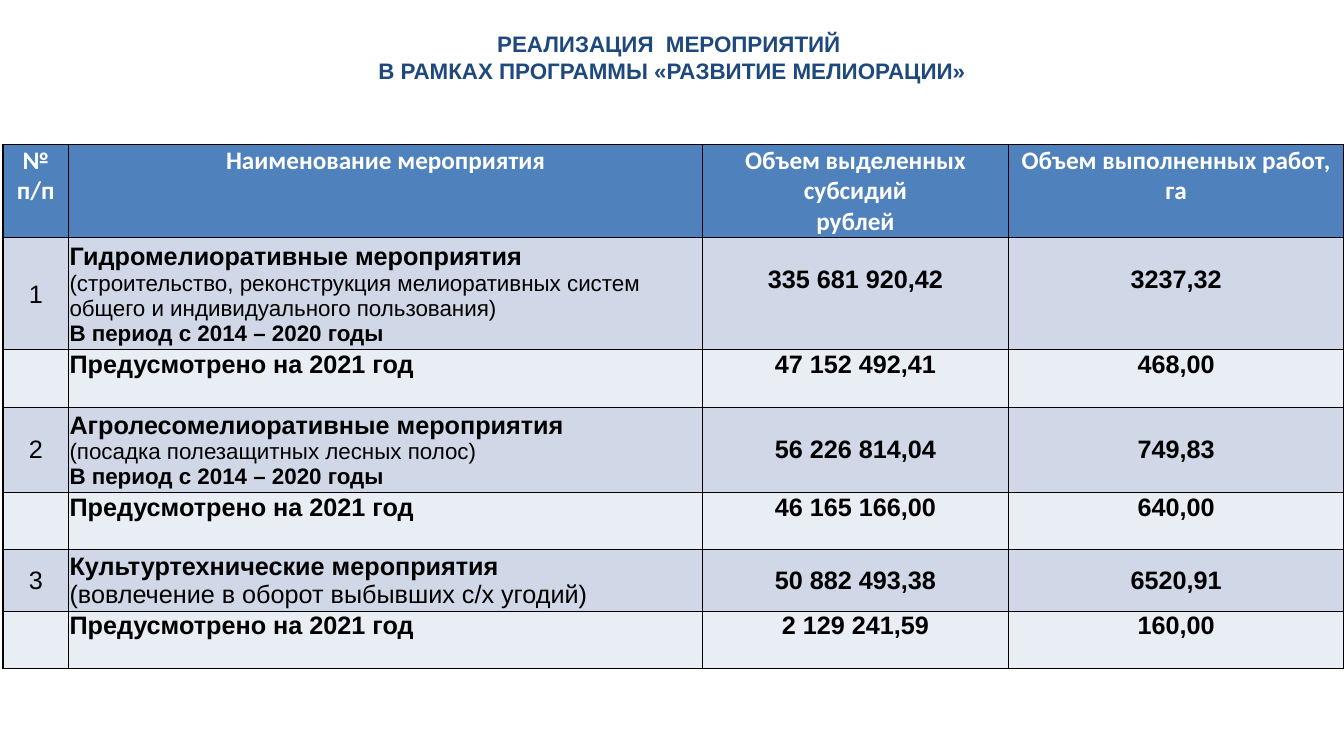
from dataclasses import dataclass

import lxml.etree
import pptx
import pptx.dml.color
import pptx.enum.text
import pptx.oxml.ns
import pptx.util

Inches = pptx.util.Inches
Align = pptx.enum.text.PP_ALIGN
Anchor = pptx.enum.text.MSO_ANCHOR
NAVY, BLUE, WHITE, BLACK = "1F497D", "4F81BD", "FFFFFF", "000000"
BANDS = ("D0D8E8", "E9EDF4")


@dataclass
class Line:
    text: str
    size: int = 18
    bold: bool = True
    face: str = "Arial"
    color: str = BLACK
    align: Align = Align.CENTER


@dataclass
class Work:
    name: str
    notes: list[Line]
    past: tuple[str, str]
    plan: tuple[str, str]
    height: float
    lift: float = 0  # bottom inset that raises the amounts


def tint(code: str) -> pptx.dml.color.RGBColor:
    return pptx.dml.color.RGBColor.from_string(code)


def write(frame, lines: list[Line]) -> None:
    for i, line in enumerate(lines):
        para = frame.add_paragraph() if i else frame.paragraphs[0]
        para.text = line.text
        para.alignment = line.align
        look = {"size": pptx.util.Pt(line.size), "bold": line.bold, "name": line.face}
        for run in para.runs:
            for key, value in look.items():
                setattr(run.font, key, value)
            run.font.color.rgb = tint(line.color)


def border(cell) -> None:
    props = cell._tc.get_or_add_tcPr()
    qn = pptx.oxml.ns.qn
    for i, side in enumerate(("lnL", "lnR", "lnT", "lnB")):
        edge = lxml.etree.Element(qn(f"a:{side}"), w="12700")
        fill = lxml.etree.SubElement(edge, qn("a:solidFill"))
        lxml.etree.SubElement(fill, qn("a:srgbClr"), val=BLACK)
        props.insert(i, edge)


def fill_cell(cell, lines: list[Line], color: str, anchor: Anchor, lift: float = 0) -> None:
    look = {
        "margin_left": Inches(0.01), "margin_right": Inches(0.01),
        "margin_top": Inches(0.01), "margin_bottom": Inches(lift),
        "vertical_anchor": anchor,
    }
    for key, value in look.items():
        setattr(cell, key, value)
    cell.fill.solid()
    cell.fill.fore_color.rgb = tint(color)
    write(cell.text_frame, lines)
    border(cell)


PERIOD = Line("В период с 2014 – 2020 годы", 16, align=Align.LEFT)
PLAN = Line("Предусмотрено на 2021 год", align=Align.LEFT)
HEADS = ("№\vп/п", "Наименование мероприятия",
         "Объем выделенных субсидий\vрублей", "Объем выполненных работ, га")
WIDTHS = (0.65, 6.29, 3.03, 3.33)
HEAD_TALL, PLAN_TALL = 0.93, 0.57
WORKS = [
    Work("Гидромелиоративные мероприятия",
         [Line("(строительство, реконструкция мелиоративных систем "
               "общего и индивидуального пользования)", 16, False, align=Align.LEFT), PERIOD],
         ("335 681 920,42", "3237,32"), ("47 152 492,41", "468,00"), 1.03, 0.28),
    Work("Агролесомелиоративные мероприятия",
         [Line("(посадка полезащитных лесных полос)", 16, False, align=Align.LEFT), PERIOD],
         ("56 226 814,04", "749,83"), ("46 165 166,00", "640,00"), 0.78),
    Work("Культуртехнические мероприятия",
         [Line("(вовлечение в оборот выбывших с/х угодий)", 18, False, align=Align.LEFT)],
         ("50 882 493,38", "6520,91"), ("2 129 241,59", "160,00"), 0.57),
]


def add_title(slide) -> None:
    box = slide.shapes.add_textbox(Inches(0.13), Inches(0.13), Inches(13.07), Inches(0.87))
    frame = box.text_frame
    look = {
        "word_wrap": True, "vertical_anchor": Anchor.MIDDLE,
        "margin_left": Inches(0.12), "margin_right": Inches(0.12),
        "margin_top": Inches(0.06), "margin_bottom": Inches(0.06),
    }
    for key, value in look.items():
        setattr(frame, key, value)
    write(frame, [Line("РЕАЛИЗАЦИЯ  МЕРОПРИЯТИЙ \vВ РАМКАХ ПРОГРАММЫ «РАЗВИТИЕ МЕЛИОРАЦИИ»",
                       16, color=NAVY)])


def add_grid(slide) -> None:
    talls = [HEAD_TALL]
    for work in WORKS:
        talls += [work.height, PLAN_TALL]
    grid = slide.shapes.add_table(len(talls), len(WIDTHS), Inches(0.03), Inches(1.43),
                                  Inches(sum(WIDTHS)), Inches(sum(talls))).table
    for column, width in zip(grid.columns, WIDTHS):
        column.width = Inches(width)
    for row, tall in zip(grid.rows, talls):
        row.height = Inches(tall)

    for i, head in enumerate(HEADS):
        fill_cell(grid.cell(0, i), [Line(head, face="Calibri", color=WHITE)], BLUE, Anchor.TOP)
    for i, work in enumerate(WORKS):
        top = 2 * i + 1
        name = Line(work.name, align=Align.LEFT)
        fill_cell(grid.cell(top, 0), [Line(str(i + 1), bold=False)], BANDS[0], Anchor.MIDDLE)
        fill_cell(grid.cell(top, 1), [name, *work.notes], BANDS[0], Anchor.MIDDLE)
        fill_cell(grid.cell(top + 1, 0), [], BANDS[1], Anchor.TOP)
        fill_cell(grid.cell(top + 1, 1), [PLAN], BANDS[1], Anchor.TOP)
        for j, (past, plan) in enumerate(zip(work.past, work.plan), 2):
            fill_cell(grid.cell(top, j), [Line(past)], BANDS[0], Anchor.MIDDLE, work.lift)
            fill_cell(grid.cell(top + 1, j), [Line(plan)], BANDS[1], Anchor.TOP)


def main() -> None:
    deck = pptx.Presentation()
    deck.slide_width, deck.slide_height = Inches(13.33), Inches(7.5)
    slide = deck.slides.add_slide(deck.slide_layouts[6])
    add_title(slide)
    add_grid(slide)
    deck.save("out.pptx")


if __name__ == "__main__":
    main()
